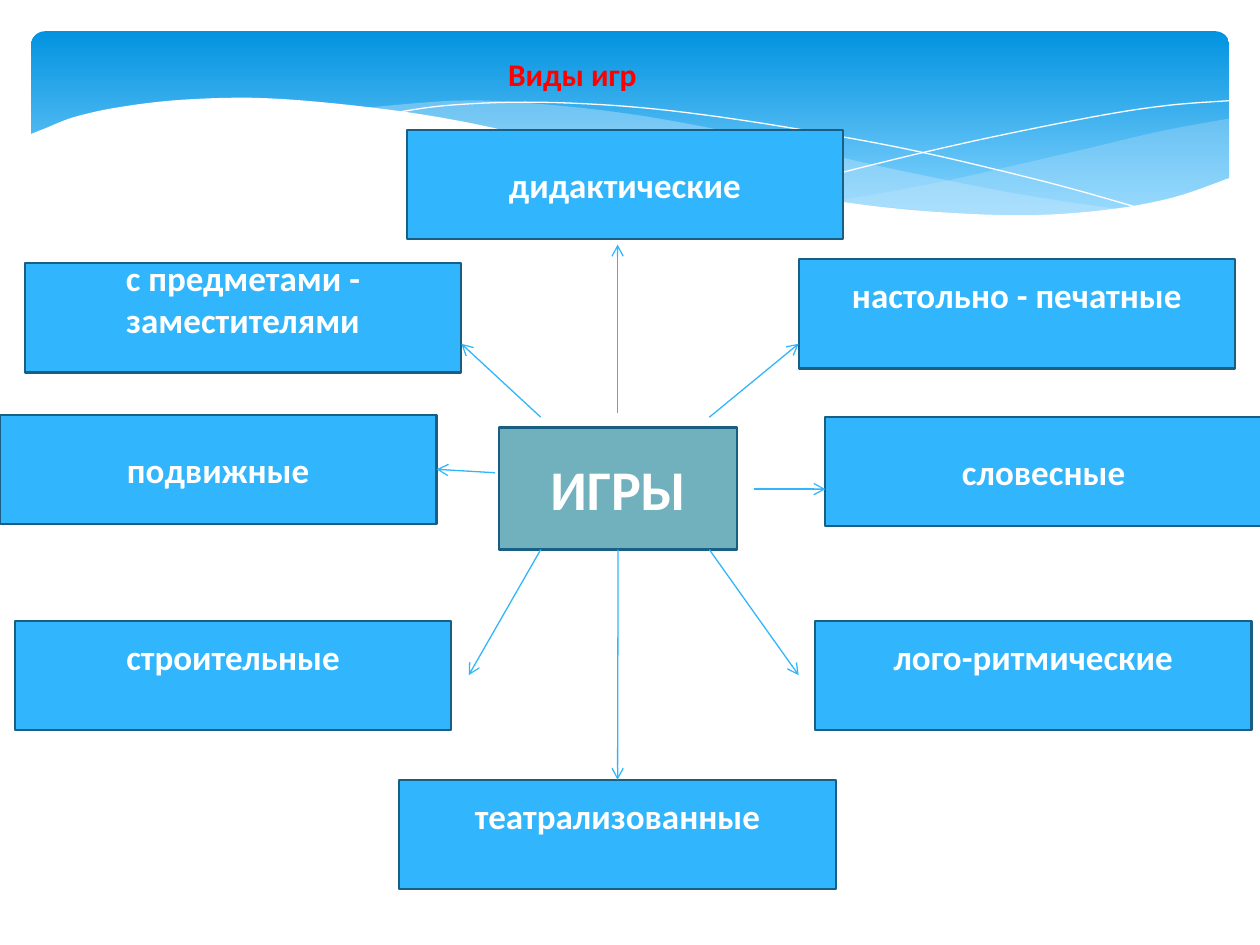
from dataclasses import dataclass

from lxml.etree import SubElement
from pptx import Presentation
from pptx.dml.color import RGBColor
from pptx.enum.shapes import MSO_CONNECTOR, MSO_SHAPE
from pptx.enum.text import MSO_ANCHOR, MSO_AUTO_SIZE, PP_ALIGN
from pptx.oxml.ns import qn
from pptx.util import Cm, Pt


@dataclass(frozen=True)
class Theme:
    font: str = "Calibri"
    white: str = "FFFFFF"
    title: str = "FF0000"
    box: str = "31B6FD"
    center: str = "71B0BD"
    outline: str = "195F84"
    band_top: str = "0293E0"
    band_bottom: str = "83D3FE"
    wave: str = "C6E7FC"
    title_size: int = 18
    box_size: int = 20
    center_size: int = 32


THEME = Theme()

# All positions are in centimetres.
TITLE = ("Виды игр", 9.98, 0.97, 3.12, 1.02)
CENTER = ("ИГРЫ", 10.06, 8.62, 4.8, 2.46)
BOX_WIDTH, BOX_HEIGHT = 8.8, 2.2
INSET = 0.13
RAISED = 0.9  # bottom inset that lifts the text above the middle

# text, left, top, bottom inset
GAMES = [
    ("словесные", 16.64, 8.4, INSET),
    ("настольно - печатные", 16.1, 5.23, RAISED),
    ("лого-ритмические", 16.43, 12.52, RAISED),
    ("театрализованные", 8.05, 15.72, RAISED),
    ("строительные", 0.3, 12.52, RAISED),
    ("с предметами - заместителями", 0.5, 5.31, RAISED),
    ("подвижные", 0, 8.36, INSET),
    ("дидактические", 8.2, 2.62, INSET),
]

# start, end, joined start (text, side), joined end (text, side)
ARROWS = [
    ((12.45, 8.33), (12.45, 4.93), None, None),
    ((14.3, 8.41), (16.1, 6.93), None, None),
    ((10.9, 8.41), (9.3, 6.93), None, None),
    ((15.19, 9.86), (16.64, 9.86), None, None),
    ((9.98, 9.53), (8.8, 9.46), None, ("подвижные", 3)),
    ((10.9, 11.08), (9.45, 13.61), None, None),
    ((14.3, 11.08), (16.1, 13.61), None, None),
    ((12.45, 11.08), (12.45, 15.72), ("ИГРЫ", 2), ("театрализованные", 0)),
]

# Each wave is a list of edges; every edge is a smooth curve through its points.
RIGHT_WAVE = [
    [(24.79, 2.39), (23.42, 2.64), (21.9, 3), (20.47, 3.33), (19.15, 3.63),
     (17.96, 3.86), (16.81, 4.06)],
    [(16.81, 4.06), (18.62, 4.24), (20.14, 4.37), (21.74, 4.34), (23.04, 4.15),
     (24.16, 3.86), (24.81, 3.61)],
]
MIDDLE_WAVE = [
    [(22.71, 4.24), (20.52, 3.91), (17.96, 3.4), (16, 2.95), (14.1, 2.54),
     (12.42, 2.26), (10.67, 2.08), (9.19, 2.03), (7.29, 2.18)],
    [(7.29, 2.18), (9.22, 2.46), (11.43, 2.95), (13.46, 3.43), (15.29, 3.81),
     (16.92, 4.09), (18.36, 4.27), (19.66, 4.37), (21.06, 4.39), (22.71, 4.24)],
]
FALLING_LINE = [
    [(7.87, 2.29), (8.97, 2.13), (10.59, 2.06), (12.42, 2.13), (14.15, 2.31),
     (16.18, 2.62), (18.49, 3.05), (21.13, 3.68), (23.06, 4.22)],
]
RISING_LINE = [
    [(15.6, 3.84), (17.68, 3.3), (19.74, 2.82), (22.02, 2.36), (23.5, 2.13),
     (24.79, 2.03)],
]
WHITE_WAVE = [
    [(24.81, 3.58), (23.62, 3.99), (22.23, 4.24), (20.55, 4.34), (18.44, 4.24),
     (16.46, 3.99), (14.1, 3.53), (11.35, 2.9), (9.27, 2.44), (7.42, 2.16),
     (5.36, 1.98), (3.71, 2.01), (2.41, 2.16), (1.5, 2.36), (0.91, 2.59),
     (0.58, 2.72)],
    [(0.58, 5.69), (24.81, 5.69)],
]


def color(value):
    return RGBColor.from_string(value)


def smooth(points, steps=6):
    """Sample a Catmull-Rom curve that passes through the points."""
    padded = [points[0], *points, points[-1]]
    curve = [points[0]]
    for a, b, c, d in zip(padded, padded[1:], padded[2:], padded[3:]):
        for step in range(1, steps + 1):
            t = step / steps
            curve.append(tuple(
                b[i] + 0.5 * t * (c[i] - a[i]
                + t * (2 * a[i] - 5 * b[i] + 4 * c[i] - d[i]
                + t * (3 * b[i] - a[i] - 3 * c[i] + d[i])))
                for i in (0, 1)))
    return curve


def add_wave(slide, edges, fill=None, opacity=100):
    """Draw a filled wave, or an open white hairline when no fill is given."""
    points = [(Cm(x), Cm(y)) for edge in edges for x, y in smooth(edge)]
    builder = slide.shapes.build_freeform(*points[0])
    builder.add_line_segments(points[1:], close=fill is not None)
    shape = builder.convert_to_shape()
    shape.shadow.inherit = False
    if fill is None:
        shape.fill.background()
        shape.line.color.rgb = color(THEME.white)
        shape.line.width = Pt(0)
        return
    shape.fill.solid()
    shape.fill.fore_color.rgb = color(fill)
    shape.line.fill.background()
    if opacity < 100:
        rgb = shape._element.spPr.find(qn("a:solidFill")).find(qn("a:srgbClr"))
        SubElement(rgb, qn("a:alpha"), val=str(opacity * 1000))


def add_header(slide):
    band = slide.shapes.add_shape(
        MSO_SHAPE.ROUNDED_RECTANGLE, Cm(0.63), Cm(0.63), Cm(24.15), Cm(3.96))
    band.adjustments[0] = 0.07
    band.shadow.inherit = False
    band.line.fill.background()
    band.fill.gradient()
    band.fill.gradient_angle = 270
    stops = [(0, THEME.band_top), (0.9, THEME.band_bottom)]
    for stop, (position, value) in zip(band.fill.gradient_stops, stops):
        stop.position = position
        stop.color.rgb = color(value)
    add_wave(slide, RIGHT_WAVE, THEME.wave, 29)
    add_wave(slide, MIDDLE_WAVE, THEME.wave, 40)
    add_wave(slide, FALLING_LINE)
    add_wave(slide, RISING_LINE)
    add_wave(slide, WHITE_WAVE, THEME.white)


def write(shape, text, size, value):
    frame = shape.text_frame
    frame.vertical_anchor = MSO_ANCHOR.MIDDLE
    paragraph = frame.paragraphs[0]
    paragraph.alignment = PP_ALIGN.CENTER
    run = paragraph.add_run()
    run.text = text
    run.font.name, run.font.size, run.font.bold = THEME.font, Pt(size), True
    run.font.color.rgb = color(value)


def add_box(slide, text, left, top, width, height, fill, size, bottom=INSET):
    box = slide.shapes.add_shape(
        MSO_SHAPE.RECTANGLE, Cm(left), Cm(top), Cm(width), Cm(height))
    box.shadow.inherit = False
    box.fill.solid()
    box.fill.fore_color.rgb = color(fill)
    box.line.color.rgb = color(THEME.outline)
    box.line.width = Pt(1.25)
    box.text_frame.word_wrap = True
    box.text_frame.margin_bottom = Cm(bottom)
    write(box, text, size, THEME.white)
    return box


def add_arrow(slide, boxes, start, end, start_joint, end_joint):
    arrow = slide.shapes.add_connector(
        MSO_CONNECTOR.STRAIGHT, *map(Cm, start), *map(Cm, end))
    if start_joint:
        arrow.begin_connect(boxes[start_joint[0]], start_joint[1])
    if end_joint:
        arrow.end_connect(boxes[end_joint[0]], end_joint[1])
    arrow.line.color.rgb = color(THEME.box)
    arrow.line.width = Pt(0.75)
    SubElement(arrow.line._get_or_add_ln(), qn("a:tailEnd"), type="arrow")
    SubElement(arrow._element.spPr, qn("a:effectLst"))


def add_title(slide):
    text, *place = TITLE
    title = slide.shapes.title
    title.left, title.top, title.width, title.height = map(Cm, place)
    title.text_frame.word_wrap = False
    title.text_frame.auto_size = MSO_AUTO_SIZE.NONE
    write(title, text, THEME.title_size, THEME.title)
    slide.shapes._spTree.append(title._element)  # bring in front of the band


def main():
    presentation = Presentation()
    presentation.slide_width, presentation.slide_height = Cm(25.4), Cm(19.05)
    slide = presentation.slides.add_slide(presentation.slide_layouts[5])
    add_header(slide)
    boxes = {CENTER[0]: add_box(slide, *CENTER, THEME.center, THEME.center_size)}
    for text, left, top, bottom in GAMES:
        boxes[text] = add_box(slide, text, left, top, BOX_WIDTH, BOX_HEIGHT,
                              THEME.box, THEME.box_size, bottom)
    for arrow in ARROWS:
        add_arrow(slide, boxes, *arrow)
    add_title(slide)
    presentation.save("out.pptx")


if __name__ == "__main__":
    main()
